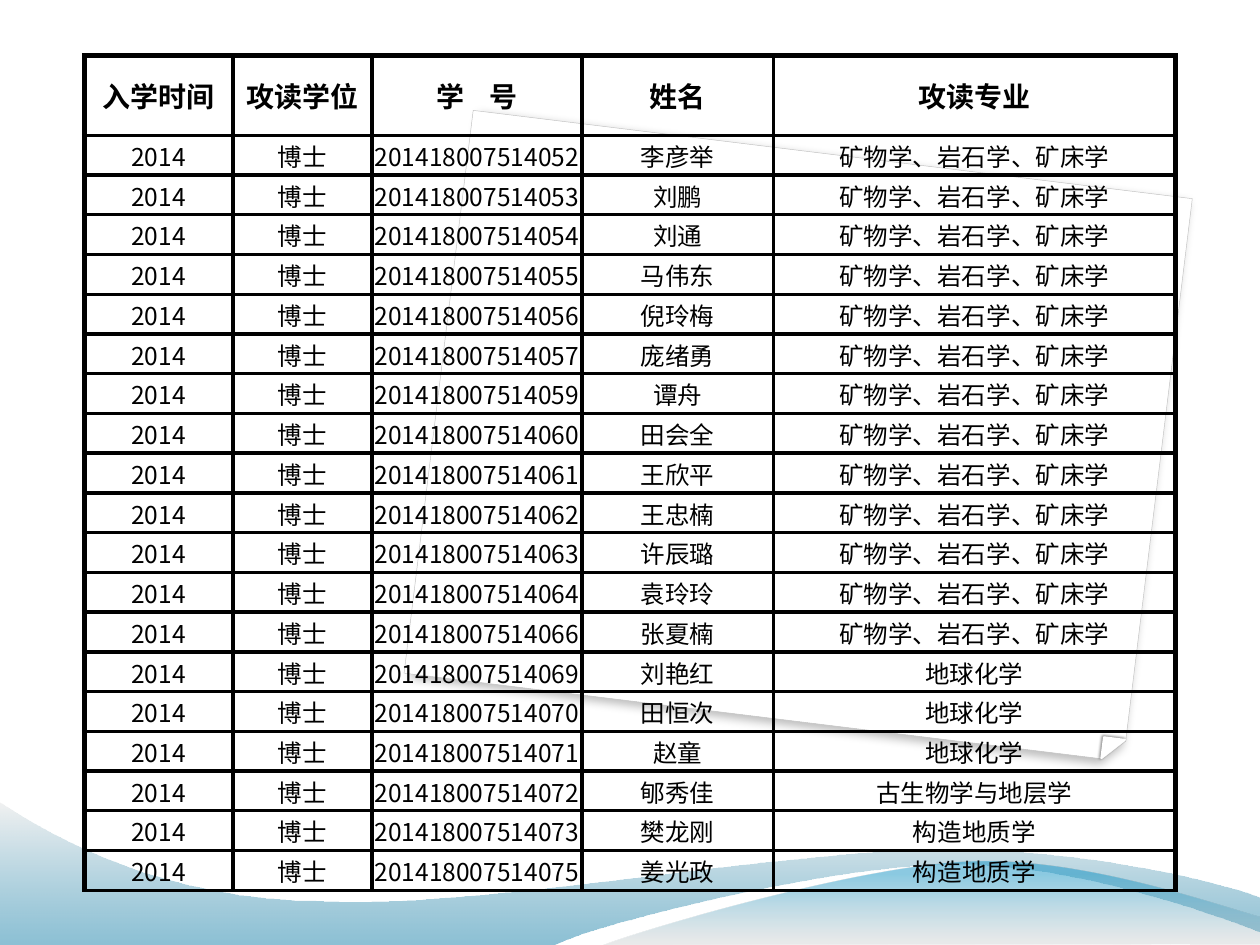
from collections import namedtuple
from dataclasses import dataclass

import lxml.etree
import pptx
import pptx.dml.color
import pptx.enum.shapes
import pptx.enum.text
import pptx.oxml.ns
import pptx.util

Pt = pptx.util.Pt
qn = pptx.oxml.ns.qn
Box = namedtuple("Box", "left top width height")
Stop = namedtuple("Stop", "position color opacity")


@dataclass(frozen=True)
class Theme:
    """Colours, type sizes and line widths of the slide."""
    font: str = "Noto Sans CJK SC"
    ink: str = "000000"
    paper: str = "FFFFFF"
    paper_edge: str = "C0C0C0"
    header_size: float = 16
    body_size: float = 14
    outer_border: float = 3
    inner_border: float = 2.25
    upper_wave: tuple = (Stop(0, "0074A1", 45), Stop(1, "E7E7E7", 55))
    lower_wave: tuple = (Stop(0, "BDBDBD", 30), Stop(0.8, "008BBF", 45))


THEME = Theme()

HEADERS = ("入学时间", "攻读学位", "学    号", "姓名", "攻读专业")
COLUMN_WIDTHS = (85, 79.4, 120, 109.5, 229.7)
HEADER_HEIGHT = 45.5
YEAR, DEGREE, NUMBER_PREFIX = "2014", "博士", "2014180075140"
STUDENTS_BY_MAJOR = {
    "矿物学、岩石学、矿床学": (
        ("52", "李彦举"), ("53", "刘鹏"), ("54", "刘通"), ("55", "马伟东"),
        ("56", "倪玲梅"), ("57", "庞绪勇"), ("59", "谭舟"), ("60", "田会全"),
        ("61", "王欣平"), ("62", "王忠楠"), ("63", "许辰璐"), ("64", "袁玲玲"),
        ("66", "张夏楠")),
    "地球化学": (("69", "刘艳红"), ("70", "田恒次"), ("71", "赵童")),
    "古生物学与地层学": (("72", "郇秀佳"),),
    "构造地质学": (("73", "樊龙刚"), ("75", "姜光政")),
}

UPPER_WAVE = [
    [(0.7, 82.1)], [(317.5, 82.1)],
    [(343.4, 69.1), (478.8, 36), (546.5, 36)],
    [(614.9, 36), (690.5, 63.4), (720.7, 74.9)],
    [(721.4, 55.4)],
    [(708.5, 49.7), (627.1, 26.6), (537.8, 27.4)],
    [(448.6, 27.4), (275.8, 61.2), (185.8, 56.9)],
    [(93.6, 56.2), (33.8, 21.6), (0, 0)],
    [(0.7, 82.1)],
]
LOWER_WAVE = [
    [(0, 50.4)],
    [(21.6, 41.8), (146.2, 5), (208.8, 2.9)],
    [(271.4, 0), (347, 26.6), (375.1, 34.6)],
    [(375.1, 50)], [(0, 50.4)],
]


def rgb(color):
    """Return a colour object for a hex string."""
    return pptx.dml.color.RGBColor.from_string(color)


def add_element(parent, tag, **attributes):
    """Append a drawing element with the given attributes."""
    element = lxml.etree.SubElement(parent, qn(tag))
    for name, value in attributes.items():
        element.set(name, str(value))
    return element


def set_text(frame, text, *, size, bold=False, hanging=0):
    """Write centred text in the theme font."""
    paragraph = frame.paragraphs[0]
    paragraph.alignment = pptx.enum.text.PP_ALIGN.CENTER
    if hanging:
        properties = paragraph._p.get_or_add_pPr()
        properties.set("marL", str(Pt(hanging)))
        properties.set("indent", str(-Pt(hanging)))
    run = paragraph.add_run()
    run.text = text
    run.font.size = Pt(size)
    run.font.bold = bold
    run.font.name = THEME.font
    run.font.color.rgb = rgb(THEME.ink)
    add_element(run._r.get_or_add_rPr(), "a:ea", typeface=THEME.font)


def add_shadow(shape, *, opacity, blur, distance, direction, **skew):
    """Give a shape an outer shadow."""
    shape.shadow.inherit = False
    effects = shape._element.spPr.find(qn("a:effectLst"))
    shadow = add_element(effects, "a:outerShdw", blurRad=Pt(blur), dist=Pt(distance),
                         dir=direction * 60000, **skew, algn="tl", rotWithShape=0)
    color = add_element(shadow, "a:srgbClr", val=THEME.ink)
    add_element(color, "a:alpha", val=opacity * 1000)


def add_tilted_shape(slide, kind, box, *, line, line_width):
    """Add a white shape, turned by seven degrees and flipped vertically."""
    shape = slide.shapes.add_shape(kind, *map(Pt, box))
    shape.rotation = 7
    shape._element.spPr.xfrm.set("flipV", "1")
    shape.fill.solid()
    shape.fill.fore_color.rgb = rgb(THEME.paper)
    shape.line.color.rgb = rgb(line)
    shape.line.width = Pt(line_width)
    return shape


def add_paper(slide, box):
    """Draw the tilted sheet with its folded corner."""
    kinds = pptx.enum.shapes.MSO_SHAPE
    sheet = add_tilted_shape(slide, kinds.SNIP_ROUND_RECTANGLE, box,
                             line=THEME.paper_edge, line_width=0.25)
    sheet.adjustments[0], sheet.adjustments[1] = 0, 0.036
    add_shadow(sheet, opacity=25, blur=5, distance=3, direction=125,
               sx=98500, sy=100080, kx=100000)
    fold_box = Box(box.left + 380.9, box.top + 334.8, 12.2, 12.2)
    fold = add_tilted_shape(slide, kinds.RIGHT_TRIANGLE, fold_box,
                            line=THEME.paper, line_width=1)
    add_shadow(fold, opacity=47, blur=1.6, distance=0.5, direction=215)


def bend_lines(shape, segments):
    """Merge each three-point segment of a freeform into one cubic curve."""
    lines = iter(list(shape._element.iter(qn("a:lnTo"))))
    for segment in segments[1:]:
        segment_lines = [next(lines) for _ in segment]
        if len(segment) == 3:
            curve = lxml.etree.Element(qn("a:cubicBezTo"))
            segment_lines[0].addprevious(curve)
            for line in segment_lines:
                curve.append(line[0])
                line.getparent().remove(line)


def add_wave(slide, box, segments, stops):
    """Draw a translucent wave with its gradient rising from the bottom."""
    points = [(Pt(box.left + x), Pt(box.top + y)) for segment in segments for x, y in segment]
    builder = slide.shapes.build_freeform(*points[0])
    builder.add_line_segments(points[1:], close=True)
    wave = builder.convert_to_shape()
    bend_lines(wave, segments)
    wave.shadow.inherit = False
    wave.line.fill.background()
    wave.fill.gradient()
    wave.fill.gradient_angle = 90
    for gradient_stop, stop in zip(wave.fill.gradient_stops, stops):
        gradient_stop.position = stop.position
        gradient_stop.color.rgb = rgb(stop.color)
    for color, stop in zip(wave._element.spPr.iter(qn("a:srgbClr")), stops):
        add_element(color, "a:alpha", val=stop.opacity * 1000)


def format_cell(cell, *, is_first_row, is_first_column, is_last_column):
    """Draw the cell borders, leave the cell unfilled and centre it."""
    outer_sides = {"L": is_first_column, "R": is_last_column, "T": is_first_row, "B": False}
    properties = cell._tc.get_or_add_tcPr()
    for side, is_outer in outer_sides.items():
        width = THEME.outer_border if is_outer else THEME.inner_border
        line = add_element(properties, f"a:ln{side}", w=Pt(width))
        add_element(add_element(line, "a:solidFill"), "a:srgbClr", val=THEME.ink)
    cell.fill.background()
    cell.vertical_anchor = pptx.enum.text.MSO_ANCHOR.MIDDLE
    if not is_first_row:
        cell.margin_left = cell.margin_right = cell.margin_top = Pt(0.72)
        cell.margin_bottom = 0


def add_student_table(slide, box):
    """Place the list of doctoral students in the box."""
    rows = [HEADERS] + [(YEAR, DEGREE, NUMBER_PREFIX + suffix, name, major)
                        for major, students in STUDENTS_BY_MAJOR.items()
                        for suffix, name in students]
    table = slide.shapes.add_table(len(rows), len(HEADERS), *map(Pt, box)).table
    table.first_row = table.horz_banding = False
    for column, width in zip(table.columns, COLUMN_WIDTHS):
        column.width = Pt(width)
    body_height = (box.height - HEADER_HEIGHT) / (len(rows) - 1)
    for row_index, values in enumerate(rows):
        is_header = row_index == 0
        table.rows[row_index].height = Pt(HEADER_HEIGHT if is_header else body_height)
        for column_index, value in enumerate(values):
            cell = table.cell(row_index, column_index)
            format_cell(cell, is_first_row=is_header, is_first_column=column_index == 0,
                        is_last_column=column_index == len(HEADERS) - 1)
            set_text(cell.text_frame, value, bold=is_header,
                     size=THEME.header_size if is_header else THEME.body_size,
                     hanging=21.6 if is_header and column_index != 1 else 0)


def main():
    """Build the slide and save it."""
    presentation = pptx.Presentation()
    presentation.slide_width, presentation.slide_height = Pt(720), Pt(540)
    slide = presentation.slides.add_slide(presentation.slide_layouts[6])
    add_paper(slide, Box(249.1, 87.1, 414, 324))
    add_wave(slide, Box(-0.7, 457.9, 721.4, 82.1), UPPER_WAVE, THEME.upper_wave)
    add_wave(slide, Box(344.9, 489.6, 375.1, 50.4), LOWER_WAVE, THEME.lower_wave)
    add_student_table(slide, Box(48.1, 31.8, sum(COLUMN_WIDTHS), 477.4))
    presentation.save("out.pptx")


if __name__ == "__main__":
    main()
